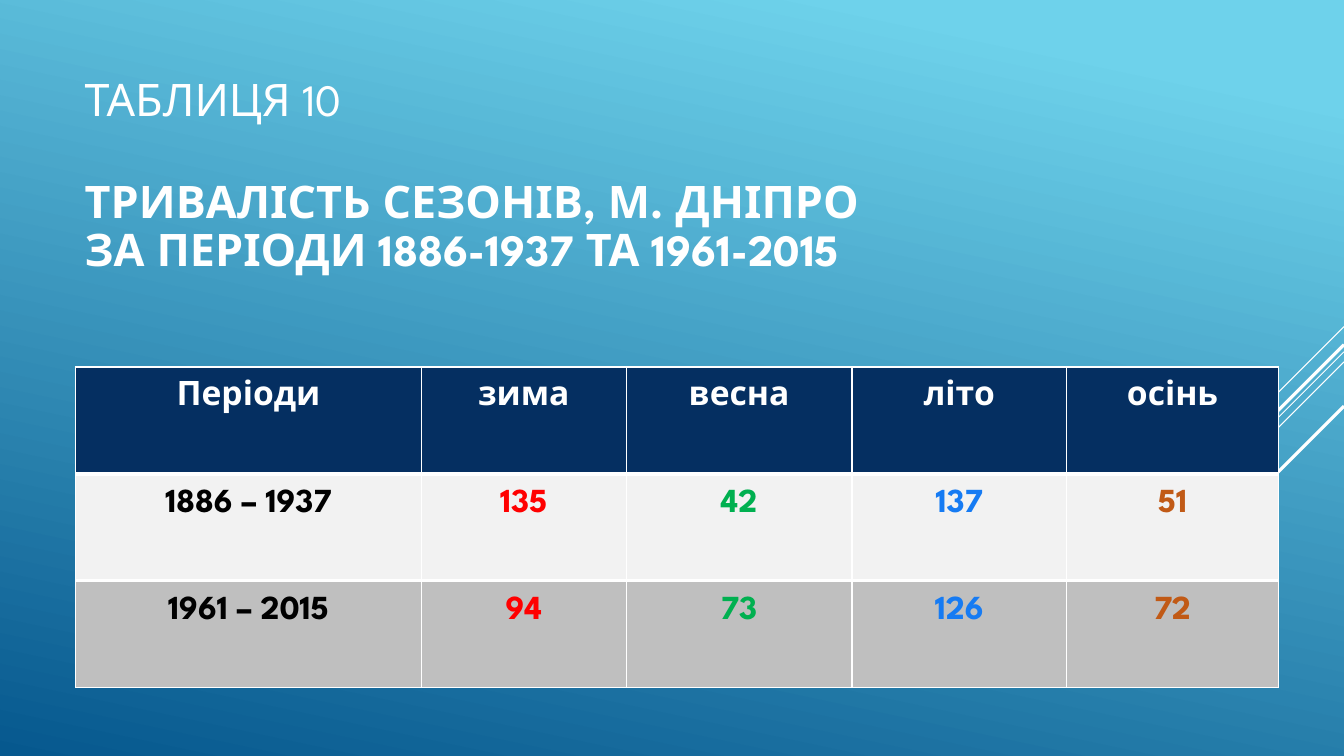
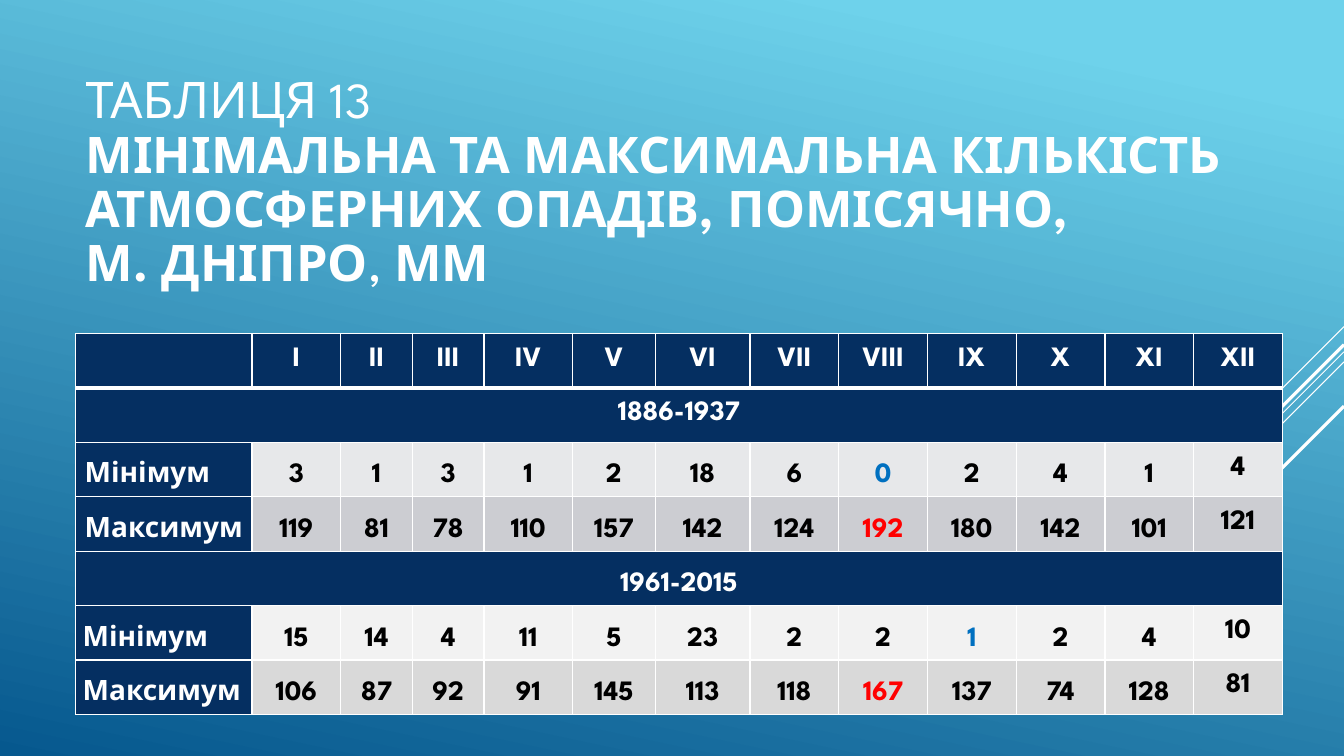
"""Build two climate table slides for the city of Dnipro."""
from lxml import etree
from pptx import Presentation
from pptx.dml.color import RGBColor
from pptx.enum.shapes import MSO_CONNECTOR
from pptx.enum.text import MSO_ANCHOR, MSO_AUTO_SIZE, PP_ALIGN
from pptx.oxml.ns import qn
from pptx.util import Inches, Pt

LEFT, CENTER = PP_ALIGN.LEFT, PP_ALIGN.CENTER
TOP, MIDDLE = MSO_ANCHOR.TOP, MSO_ANCHOR.MIDDLE
NO_FIT = MSO_AUTO_SIZE.NONE
STRAIGHT = MSO_CONNECTOR.STRAIGHT
FONT = "League Spartan"
COLORS = {
    "sky": "6ED2EB", "deep": "06588E", "navy": "052F61",
    "white": "FFFFFF", "black": "000000", "red": "FF0000",
    "green": "00B050", "azure": "167BF3", "rust": "C15A16", "blue": "0070C0",
    "pale": "F2F2F2", "silver": "BFBFBF", "mist": "E7E8EA",
    "steel": "CCCDD2", "ash": "D9D9D9",
}
RAYS = [
    (3.24, 1, 0.75), (3.49, 3.26, 0.75), (3.59, 2.07, 0.75),
    (3.42, 1.91, 2.25), (4.03, 1.39, 2.25),
]


def rgb(name):
    """Return the named palette colour."""
    return RGBColor.from_string(COLORS[name])


class Deck:
    """Hold the presentation, its style and the current slide."""

    def __init__(self):
        """Set the slide size and the shared background."""
        self.prs = Presentation()
        self.prs.slide_width = Inches(13.33)
        self.prs.slide_height = Inches(7.5)
        self.layout = self.prs.slide_layouts[5]
        fill = self.prs.slide_master.background.fill
        fill.gradient()
        fill.gradient_angle = 258
        for stop, (pos, color) in zip(fill.gradient_stops, [(0.1, "sky"), (1, "deep")]):
            stop.position = pos
            stop.color.rgb = rgb(color)
        self.slide = None

    def add_slide(self):
        """Start a slide, drawing the layout rays the first time."""
        first = self.slide is None
        self.slide = self.prs.slides.add_slide(self.layout)
        if first:
            for y, reach, weight in RAYS:
                ray = self.line(13.33, y, 13.33 - reach, y + reach, weight)
                self.layout.shapes.element.append(ray.element)

    def line(self, x1, y1, x2, y2, weight):
        """Draw a plain white line."""
        sp = self.slide.shapes.add_connector(
            STRAIGHT, Inches(x1), Inches(y1), Inches(x2), Inches(y2))
        sp.line.color.rgb = rgb("white")
        sp.line.width = Pt(weight)
        etree.SubElement(sp.element.spPr, qn("a:effectLst"))
        return sp

    def run(self, p, text, size, color="white", bold=True):
        """Add one formatted run."""
        r = p.add_run()
        r.text = text
        r.font.name = FONT
        r.font.size = Pt(size)
        r.font.bold = bold
        r.font.color.rgb = rgb(color)

    def title(self, box, size, label, lines, gap=0):
        """Fill the title with a light label and lines of (text, bold) runs."""
        sp = self.slide.shapes.title
        sp.left, sp.top, sp.width, sp.height = map(Inches, box)
        tf = sp.text_frame
        tf.auto_size = NO_FIT
        tf.word_wrap = True
        tf.vertical_anchor = MIDDLE
        p = tf.paragraphs[0]
        self.run(p, label, size, bold=False)
        heading = tf.add_paragraph()
        heading.space_before = Pt(gap)
        for i, runs in enumerate(lines):
            if i:
                heading.add_line_break()
            for text, bold in runs:
                self.run(heading, text, size, bold=bold)
        for p in tf.paragraphs:
            p.alignment = LEFT
            p.line_spacing = 0.9

    def table(self, left, top, widths, row_height, rows, thick):
        """Add a white-ruled table; thick lists rows with a heavy lower edge."""
        table = self.slide.shapes.add_table(
            len(rows), len(widths), Inches(left), Inches(top),
            Inches(sum(widths)), Inches(row_height * len(rows))).table
        table.first_row = table.horz_banding = False
        for col, width in zip(table.columns, widths):
            col.width = Inches(width)
        for r, row in enumerate(table.rows):
            row.height = Inches(row_height)
            for cell in row.cells:
                self.borders(cell, 3 if r - 1 in thick else 1, 3 if r in thick else 1)
        return table

    def borders(self, cell, top, bottom):
        """Rule the four edges of a cell."""
        pr = cell._tc.get_or_add_tcPr()
        for edge, weight in [("L", 1), ("R", 1), ("T", top), ("B", bottom)]:
            ln = etree.SubElement(pr, qn(f"a:ln{edge}"), w=str(Pt(weight)))
            fill = etree.SubElement(ln, qn("a:solidFill"))
            etree.SubElement(fill, qn("a:srgbClr"), val=COLORS["white"])

    def cell(self, cell, text, size, fill, color, align=CENTER, anchor=TOP):
        """Fill a cell and write its text."""
        cell.fill.solid()
        cell.fill.fore_color.rgb = rgb(fill)
        cell.margin_left = cell.margin_right = Inches(0.07)
        cell.margin_top = cell.margin_bottom = 0
        cell.vertical_anchor = anchor
        if text:
            p = cell.text_frame.paragraphs[0]
            p.alignment = align
            p.line_spacing = 1.5
            self.run(p, text, size, color)


def seasons(deck):
    """Build the slide on the length of the seasons."""
    deck.add_slide()
    deck.title((0.74, 0.67, 11.92, 2.17), 32, "ТАБЛИЦЯ 10", [
        [("ТРИВАЛІСТЬ СЕЗОНІВ, М. ДНІПРО", True)],
        [("ЗА ПЕРІОДИ 1886-1937 ТА 1961-2015", True)],
    ], gap=38)
    rows = [
        ["Періоди", "зима", "весна", "літо", "осінь"],
        ["1886 – 1937", "135", "42", "137", "51"],
        ["1961 – 2015", "94", "73", "126", "72"],
    ]
    fills = ["navy", "pale", "silver"]
    inks = ["black", "red", "green", "azure", "rust"]
    table = deck.table(0.75, 3.64, [3.43, 2.03, 2.24, 2.13, 2.1], 1.06, rows, (0, 1))
    for r, row in enumerate(rows):
        for c, text in enumerate(row):
            deck.cell(table.cell(r, c), text, 24, fills[r], inks[c] if r else "white")


def rainfall(deck):
    """Build the slide on monthly rainfall extremes."""
    deck.add_slide()
    deck.title((0.75, 0.57, 11.87, 2.51), 36, "ТАБЛИЦЯ 13", [
        [("МІНІМАЛЬНА ТА МАКСИМАЛЬНА КІЛЬКІСТЬ АТМОСФЕРНИХ ОПАДІВ, ПОМІСЯЧНО,", True)],
        [("М. ДНІПРО", True), (", ", False), ("ММ", True)],
    ])
    rows = [
        ["", "I", "II", "III", "IV", "V", "VI", "VII", "VIII", "IX", "X", "XI", "XII"],
        ["1886-1937"],
        ["Мінімум", 3, 1, 3, 1, 2, 18, 6, 0, 2, 4, 1, 4],
        ["Максимум", 119, 81, 78, 110, 157, 142, 124, 192, 180, 142, 101, 121],
        ["1961-2015"],
        ["Мінімум", 15, 14, 4, 11, 5, 23, 2, 2, 1, 2, 4, 10],
        ["Максимум", 106, 87, 92, 91, 145, 113, 118, 167, 137, 74, 128, 81],
    ]
    fills = {2: "mist", 3: "steel", 5: "pale", 6: "ash"}
    extremes = {(2, 8): "blue", (3, 8): "red", (5, 9): "blue", (6, 8): "red"}
    widths = [1.75, 0.88, 0.71, 0.71, 0.88, 0.82, 0.94] + [0.88] * 6
    last = len(widths) - 1
    table = deck.table(0.75, 3.31, widths, 0.54, rows, (0,))
    for r, row in enumerate(rows):
        if len(row) == 1:
            table.cell(r, 0).merge(table.cell(r, last))
        for c, value in enumerate(row):
            data = r in fills and c > 0
            deck.cell(
                table.cell(r, c), str(value), 20,
                fills[r] if data else "navy",
                extremes.get((r, c), "black") if data else "white",
                LEFT if r in fills and c == 0 else CENTER,
                TOP if r < 2 or c == last else MIDDLE)
    for r in (2, 3):
        table.cell(r, 0).margin_left = Inches(0.09)


def main():
    """Build and save the deck."""
    deck = Deck()
    seasons(deck)
    rainfall(deck)
    deck.prs.save("out.pptx")


if __name__ == "__main__":
    main()
